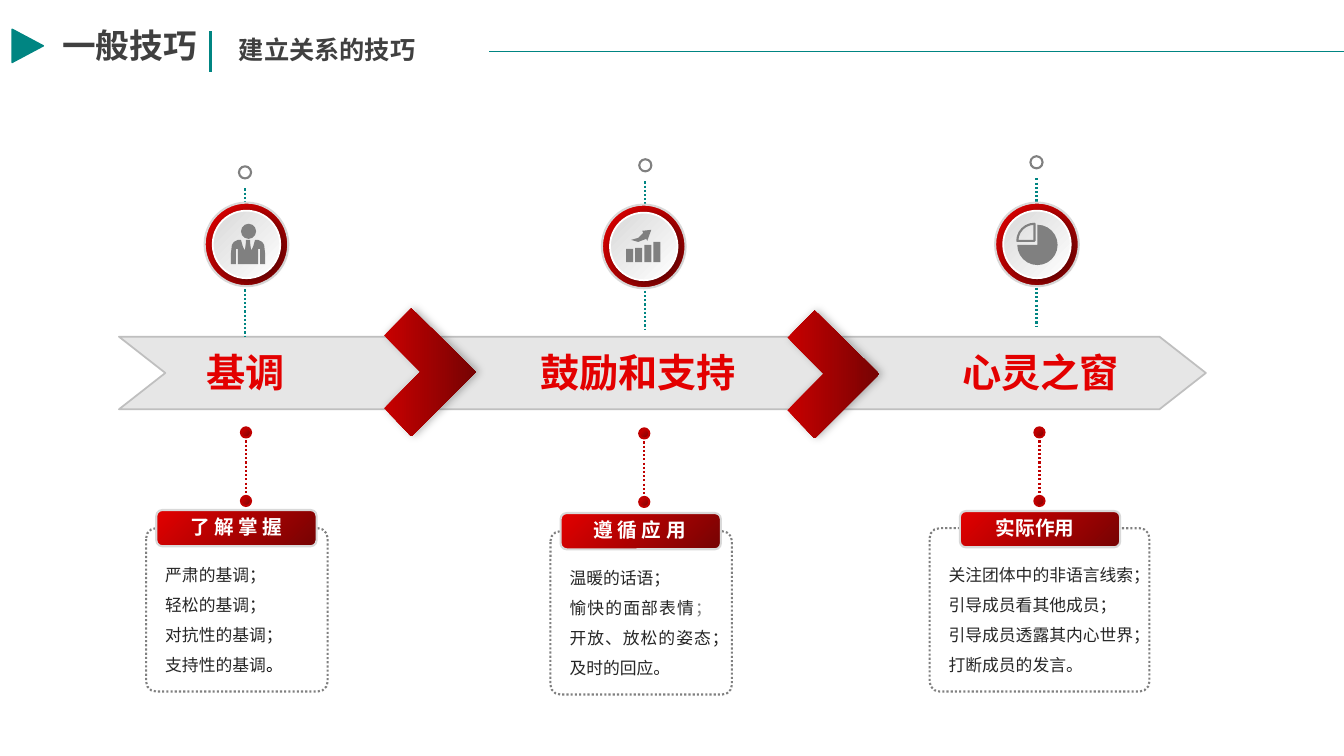
from typing import NamedTuple

from lxml.etree import SubElement
from pptx import Presentation
from pptx.dml.color import RGBColor
from pptx.enum.dml import MSO_LINE
from pptx.enum.shapes import MSO_CONNECTOR, MSO_SHAPE
from pptx.enum.text import PP_ALIGN
from pptx.oxml.ns import qn
from pptx.util import Pt

PX = 9144  # EMU in one px, 100 px to the inch
TEAL, DARK, INK, GRAY = "008582", "404040", "262626", "808080"
RED, MAROON, CRIMSON = "E30000", "760303", "C00000"
SILVER, WHITE, BLACK = "D9D9D9", "FFFFFF", "000000"
CJK = "Noto Sans CJK SC"


class Stage(NamedTuple):
    heading: str
    heading_x: int
    heading_w: int
    stem: tuple      # x and top of the upper dotted line
    badge: tuple
    dots: tuple
    label: str
    label_at: tuple
    label_indent: int
    frame: tuple     # left, top and width of the dotted frame
    body_w: int
    align: PP_ALIGN
    points: list     # paragraphs of (text, colour) runs


STAGES = [
    Stage("基调", 189, 109, (243, 187), (203, 201), (239, 424),
          "了 解 掌 握", (155, 506), 24, (145, 524, 180), 161, PP_ALIGN.JUSTIFY,
          [[("严肃的基调；", INK)], [("轻松的基调；", INK)], [("对抗性的基调；", INK)],
           [("支持性的基调", INK), ("。", BLACK)]]),
    Stage("鼓励和支持", 521, 224, (640, 180), (597, 203), (634, 425),
          "遵 循 应 用", (556, 509), 23, (546, 527, 180), 161, PP_ALIGN.JUSTIFY,
          [[("温暖的话语；", INK)],
           [("愉快的面部表情", INK), ("；", GRAY), ("开放、放松的姿态；", INK)],
           [("及时的回应。", INK)]]),
    Stage("心灵之窗", 942, 180, (1028, 177), (987, 201), (1026, 424),
          "实际作用", (952, 507), 26, (922, 524, 218), 208, PP_ALIGN.LEFT,
          [[("关注团体中的非语言线索；", INK)], [("引导成员看其他成员；", INK)],
           [("引导成员透露其内心世界；", INK)], [("打断成员的发言。", INK)]]),
]


def rgb(value):
    return RGBColor.from_string(value)


def paint(shape, fill=None, line=None, weight=1.5, dotted=False, angle=315):
    """Fill with nothing, one colour or a (start, end) gradient, then outline."""
    shape.shadow.inherit = False
    if fill is None:
        shape.fill.background()
    elif isinstance(fill, tuple):
        shape.fill.gradient()
        shape.fill.gradient_angle = angle
        for stop, colour in zip(shape.fill.gradient_stops, fill):
            stop.color.rgb = rgb(colour)
    else:
        shape.fill.solid()
        shape.fill.fore_color.rgb = rgb(fill)
    if line is None:
        shape.line.fill.background()
        return
    shape.line.color.rgb = rgb(line)
    shape.line.width = Pt(weight)
    if dotted:
        shape.line.dash_style = MSO_LINE.ROUND_DOT


def add_preset(slide, kind, x, y, w, h, **look):
    shape = slide.shapes.add_shape(kind, x * PX, y * PX, w * PX, h * PX)
    paint(shape, **look)
    return shape


def add_outline(slide, corners, **look):
    builder = slide.shapes.build_freeform(*corners[0], scale=PX)
    builder.add_line_segments(corners[1:], close=True)
    shape = builder.convert_to_shape()
    paint(shape, **look)
    return shape


def add_rule(slide, x1, y1, x2, y2, colour, weight, dotted=False):
    rule = slide.shapes.add_connector(
        MSO_CONNECTOR.STRAIGHT, x1 * PX, y1 * PX, x2 * PX, y2 * PX)
    rule.line.color.rgb = rgb(colour)
    rule.line.width = Pt(weight)
    if dotted:
        rule.line.dash_style = MSO_LINE.ROUND_DOT
    SubElement(rule._element.spPr, qn("a:effectLst"))


def add_words(slide, x, y, w, h, paragraphs, size, font=CJK, bold=False,
              align=PP_ALIGN.LEFT, spacing=None, wrap=True):
    frame = slide.shapes.add_textbox(x * PX, y * PX, w * PX, h * PX).text_frame
    frame.word_wrap = wrap
    for index, runs in enumerate(paragraphs):
        paragraph = frame.add_paragraph() if index else frame.paragraphs[0]
        paragraph.alignment = align
        paragraph.line_spacing = spacing
        for text, colour in runs:
            run = paragraph.add_run()
            run.text = text
            run.font.name = font
            run.font.size = Pt(size)
            run.font.bold = bold
            run.font.color.rgb = rgb(colour)
            SubElement(run._r.rPr, qn("a:ea"), typeface=CJK)


def cast_shadow(shape, blur, distance, degrees):
    effects = shape._element.spPr.find(qn("a:effectLst"))
    shadow = SubElement(effects, qn("a:outerShdw"), blurRad=str(Pt(blur)),
                        dist=str(Pt(distance)), dir=str(degrees * 60000),
                        rotWithShape="0")
    tint = SubElement(shadow, qn("a:srgbClr"), val=BLACK)
    SubElement(tint, qn("a:alpha"), val="30000")


def add_person(slide, x, y):
    add_preset(slide, MSO_SHAPE.OVAL, x + 36, y + 21, 15, 15, fill=GRAY)
    half = [(2, 37), (2, 39), (3, 47), (0, 53), (5, 44), (7, 37), (10, 37),
            (14, 39), (16, 42), (17, 51), (17, 61), (12, 61), (12, 46),
            (10, 46), (10, 61)]
    whole = half + [(-dx, dy) for dx, dy in reversed(half)]
    add_outline(slide, [(x + 43 + dx, y + dy) for dx, dy in whole], fill=GRAY)


def add_growth(slide, x, y):
    for index, height in enumerate((13, 14, 17, 20)):
        add_preset(slide, MSO_SHAPE.RECTANGLE, x + 24 + 9 * index,
                   y + 57 - height, 7, height, fill=GRAY)
    arrow = [(41, 28), (36, 33), (29, 35), (36, 37), (44, 34), (45, 36),
             (49, 25), (40, 26)]
    add_outline(slide, [(x + dx, y + dy) for dx, dy in arrow], fill=GRAY)


def add_pie(slide, x, y):
    rest = add_preset(slide, MSO_SHAPE.PIE, x + 22, y + 22, 40, 40, fill=GRAY)
    slice_ = add_preset(slide, MSO_SHAPE.PIE, x + 22, y + 21, 34, 34, line=GRAY)
    up, left = 162, 108  # 270 and 180 degrees
    rest.adjustments[0], rest.adjustments[1] = up, left
    slice_.adjustments[0], slice_.adjustments[1] = left, up


def add_header(slide):
    add_words(slide, 52, 20, 433, 50, [[("一般技巧", DARK)]], 24, bold=True)
    add_words(slide, 227, 29, 195, 40, [[("建立关系的技巧", DARK)]], 18,
              bold=True, wrap=False)
    add_rule(slide, 209, 71, 209, 31, TEAL, 1.75)
    marker = add_preset(slide, MSO_SHAPE.ISOSCELES_TRIANGLE, 11, 30, 33, 31,
                        fill=TEAL, line=TEAL, weight=1)
    marker.rotation = 90
    add_rule(slide, 485, 51, 1333, 51, TEAL, 1)


def add_chevron(slide, x, y):
    corners = [(0, 27), (27, 0), (91, 63), (27, 127), (0, 99), (36, 63)]
    chevron = add_outline(slide, [(x + dx, y + dy) for dx, dy in corners],
                          fill=("C80000", MAROON), angle=0)
    cast_shadow(chevron, 6, 2, 0)


def add_stage(slide, stage, add_icon):
    # Ring, dotted stem and badge above the band
    x, y = stage.stem
    add_rule(slide, x, y, x, y + 147, TEAL, 1.5, dotted=True)
    add_preset(slide, MSO_SHAPE.OVAL, x - 6, y - 22, 12, 12, line=GRAY)
    x, y = stage.badge
    add_preset(slide, MSO_SHAPE.OVAL, x, y, 83, 83, fill=(RED, MAROON), line=SILVER)
    disc = add_preset(slide, MSO_SHAPE.OVAL, x + 8, y + 8, 67, 67,
                      fill=(SILVER, WHITE), line=WHITE, weight=1.25)
    cast_shadow(disc, 5, 2, 45)
    add_icon(slide, x, y)

    # Heading on the band
    add_words(slide, stage.heading_x, 341, stage.heading_w, 57,
              [[(stage.heading, RED)]], 28, "Arial Narrow", True, PP_ALIGN.CENTER)

    # Dots below the band
    x, y = stage.dots
    for top in (y, y + 68):
        add_preset(slide, MSO_SHAPE.OVAL, x, top, 10, 10,
                   fill=(RED, MAROON), line=CRIMSON)
    add_rule(slide, x + 5, y + 13, x + 5, y + 65, CRIMSON, 1.5, dotted=True)

    # Framed list with its label
    x, y, width = stage.frame
    frame = add_preset(slide, MSO_SHAPE.ROUNDED_RECTANGLE, x, y, width, 162,
                       line=GRAY, dotted=True)
    frame.adjustments[0] = 0.06
    add_words(slide, x + 9, y + 21, stage.body_w, 131, stage.points, 12,
              align=stage.align, spacing=1.5)
    x, y = stage.label_at
    add_preset(slide, MSO_SHAPE.ROUNDED_RECTANGLE, x, y, 159, 36,
               fill=(RED, MAROON), line=SILVER)
    add_words(slide, x + stage.label_indent, y, 135, 34,
              [[(stage.label, WHITE)]], 14, "Arial", True)


def main():
    deck = Presentation()
    deck.slide_width, deck.slide_height = 1333 * PX, 750 * PX
    slide = deck.slides.add_slide(deck.slide_layouts[6])
    add_header(slide)
    # Band with its two chevrons
    add_outline(slide, [(118, 334), (1150, 334), (1196, 370), (1150, 406),
                        (118, 406), (164, 370)],
                fill="E6E6E6", line="BFBFBF", weight=1.25)
    for x, y in ((381, 306), (781, 308)):
        add_chevron(slide, x, y)
    for stage, add_icon in zip(STAGES, (add_person, add_growth, add_pie)):
        add_stage(slide, stage, add_icon)
    deck.save("out.pptx")


if __name__ == "__main__":
    main()
